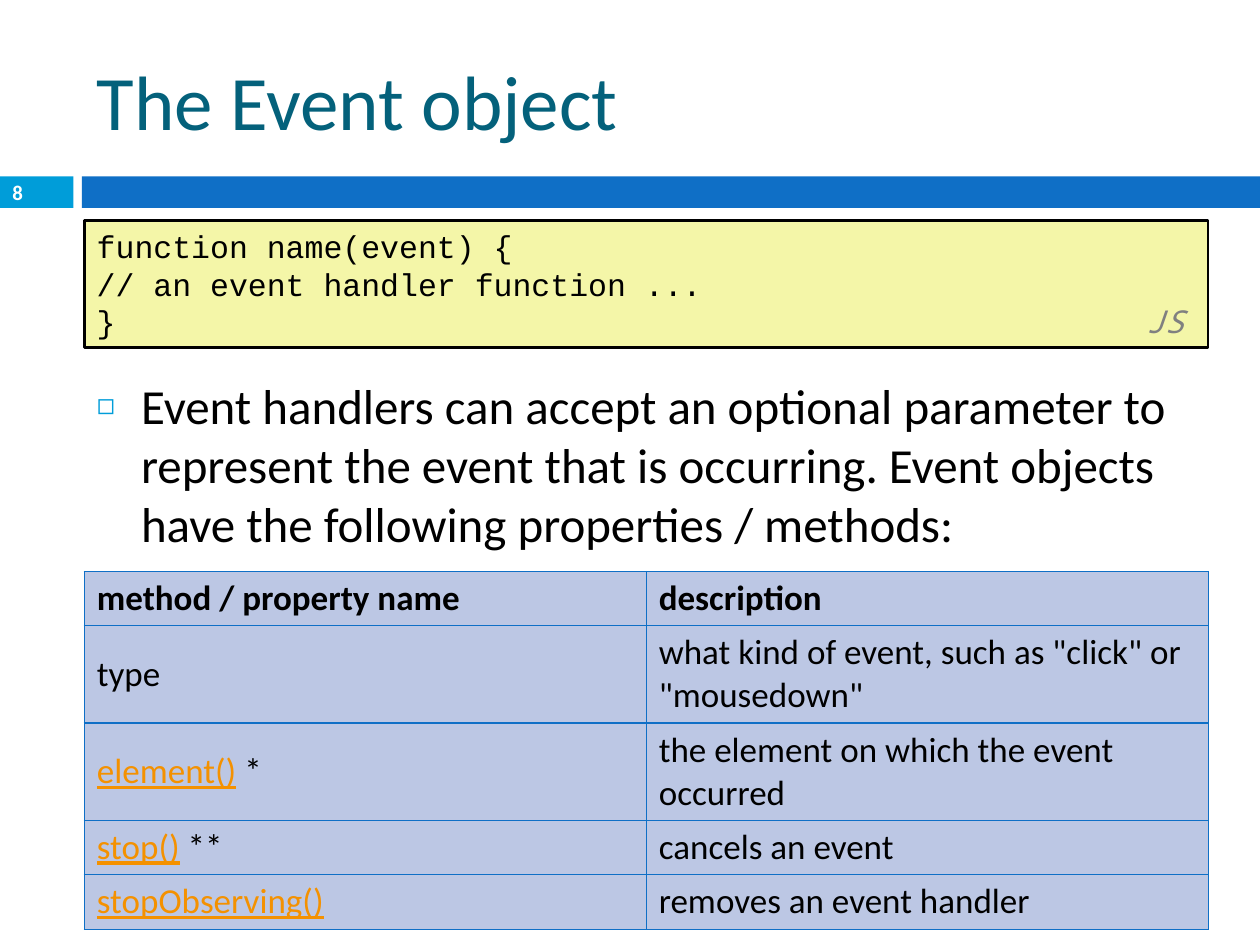
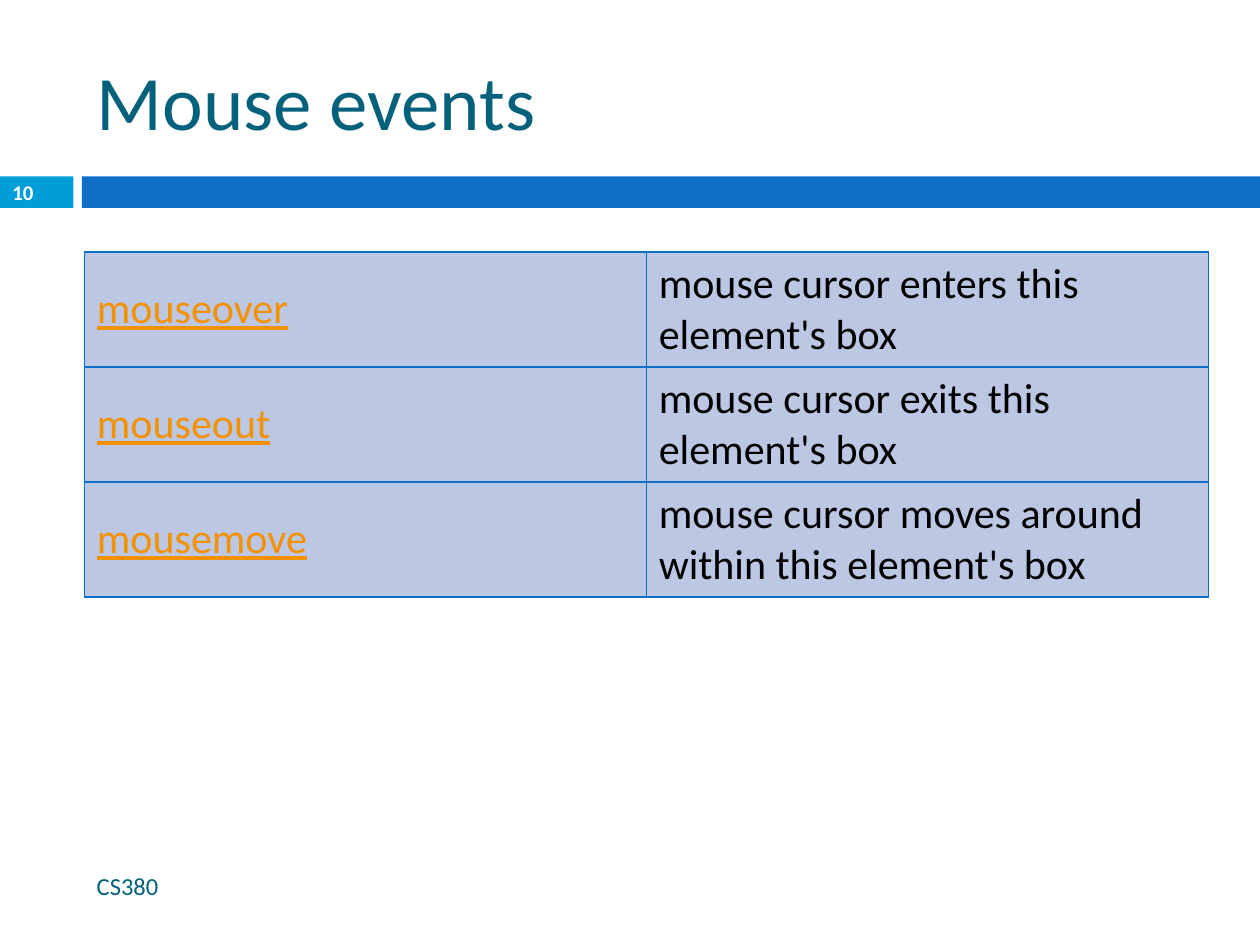
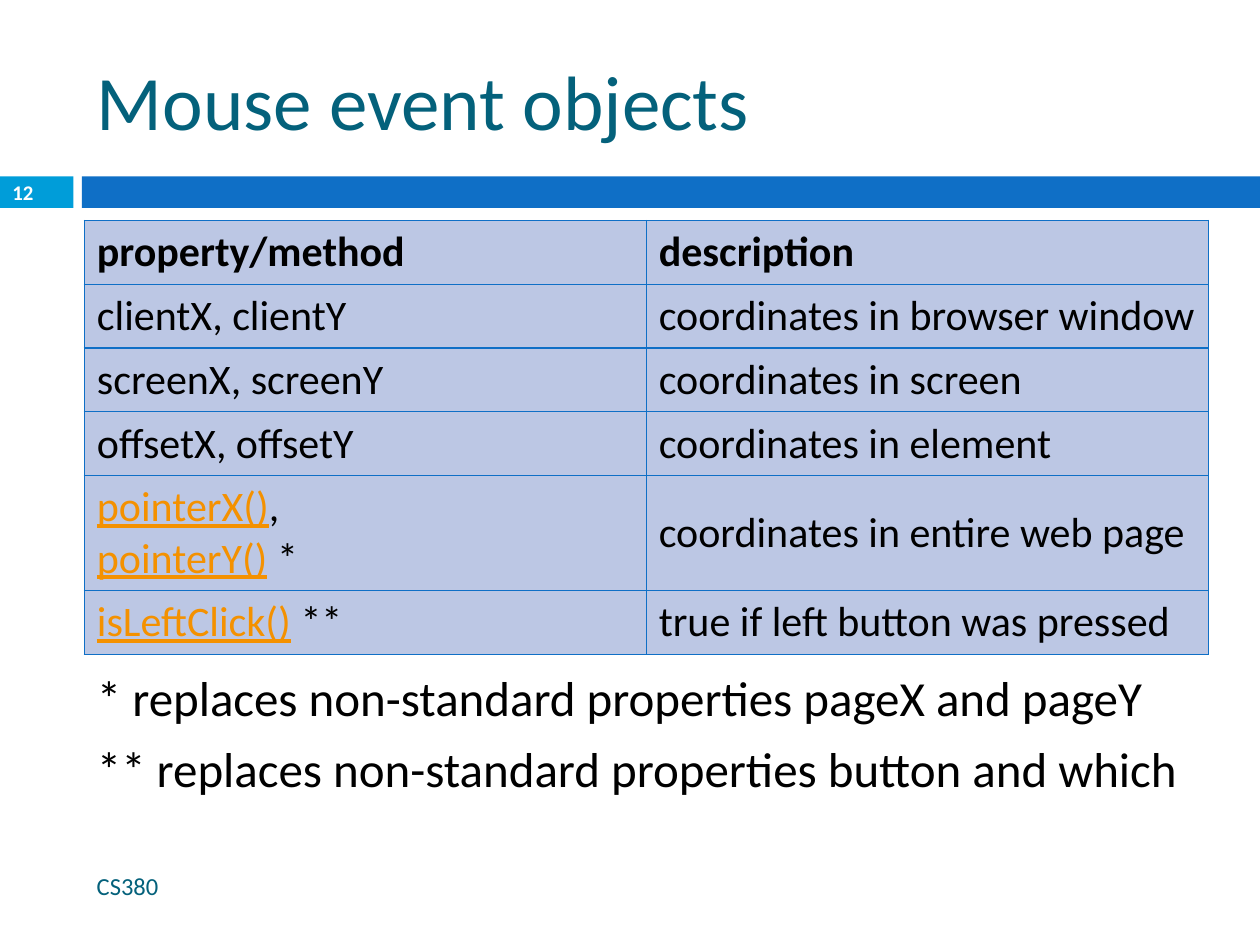
from collections import namedtuple

from lxml import etree
from pptx import Presentation
from pptx.dml.color import RGBColor
from pptx.enum import shapes, text
from pptx.oxml import ns
from pptx.util import Pt

# Shared look
TEAL = RGBColor(0x04, 0x61, 0x7B)
BLUE = RGBColor(0x0F, 0x6F, 0xC6)
CYAN = RGBColor(0x00, 0x9D, 0xD9)
ORANGE = RGBColor(0xF4, 0x91, 0x00)
CELL_BLUE = RGBColor(0xBC, 0xC7, 0xE4)
CODE_YELLOW = RGBColor(0xF4, 0xF6, 0xA8)
GRAY = RGBColor(0x80, 0x80, 0x80)
BLACK = RGBColor(0, 0, 0)
WHITE = RGBColor(0xFF, 0xFF, 0xFF)
BODY_FONT = "Calibri"
CODE_FONT = "Courier New"
LABEL_FONT = "Noto Sans Mono"

Box = namedtuple("Box", "left top width height")
LEFT, WIDTH = 48.2, 642.2
TITLE_BOX = Box(LEFT, 18, WIDTH, 77.8)
NUMBER_BOX = Box(0, 100.8, 42, 18)
BAND_BOX = Box(46.8, 100.8, 673.2, 18)
FOOTER_BOX = Box(LEFT, 491.8, 427, 28.8)
CONTENT_LAYOUT, TITLE_LAYOUT = 1, 5


def points(box):
    return [Pt(length) for length in box]


def place(shape, box):
    shape.left, shape.top, shape.width, shape.height = points(box)


def style(font, size, color, name=BODY_FONT, bold=False):
    font.size, font.name, font.bold = Pt(size), name, bold
    font.color.rgb = color


def add_element(parent, tag, **attributes):
    return etree.SubElement(parent, ns.qn(tag), attributes)


def add_rectangle(slide, box, fill):
    shape = slide.shapes.add_shape(shapes.MSO_SHAPE.RECTANGLE, *points(box))
    shape.shadow.inherit = False
    shape.fill.solid()
    shape.fill.fore_color.rgb = fill
    shape.line.fill.background()
    return shape


def add_frame(presentation, layout, title, number, footer=""):
    """Slide with title, band, slide number and optional footer."""
    slide = presentation.slides.add_slide(presentation.slide_layouts[layout])
    add_rectangle(slide, BAND_BOX, BLUE)

    number_shape = add_rectangle(slide, NUMBER_BOX, CYAN)
    number_shape.text_frame.text = str(number)
    number_shape.text_frame.vertical_anchor = text.MSO_ANCHOR.MIDDLE
    style(number_shape.text_frame.paragraphs[0].font, 11.9, WHITE, bold=True)

    title_shape = slide.shapes.title
    place(title_shape, TITLE_BOX)
    frame = title_shape.text_frame
    frame.text = title
    frame.auto_size = text.MSO_AUTO_SIZE.NONE
    frame.vertical_anchor = text.MSO_ANCHOR.MIDDLE
    frame.paragraphs[0].alignment = text.PP_ALIGN.LEFT
    style(frame.paragraphs[0].font, 44, TEAL)

    if footer:
        frame = slide.shapes.add_textbox(*points(FOOTER_BOX)).text_frame
        frame.word_wrap = True
        frame.vertical_anchor = text.MSO_ANCHOR.MIDDLE
        frame.text = footer
        style(frame.paragraphs[0].font, 14, TEAL)
    return slide


def fill_body(slide, box, lines, bulleted=False):
    """Body placeholder, with hollow square bullets or plain lines."""
    body = slide.placeholders[1]
    place(body, box)
    frame = body.text_frame
    frame.auto_size = text.MSO_AUTO_SIZE.NONE
    frame.text = "\n".join(lines)
    indent = Pt(25.2) if bulleted else 0
    for paragraph in frame.paragraphs:
        style(paragraph.font, 28, BLACK)
        paragraph.space_before = Pt(7)
        properties = paragraph._p.get_or_add_pPr()
        properties.set("marL", str(indent))
        properties.set("indent", str(-indent))
        if bulleted:
            color = add_element(properties, "a:buClr")
            add_element(color, "a:srgbClr", val=str(CYAN))
            add_element(properties, "a:buSzPct", val="60000")
            add_element(properties, "a:buChar", char="◻")
        else:
            add_element(properties, "a:buNone")


def add_code(slide, box, lines, language):
    """Code panel with the language name at the end of its last line."""
    panel = add_rectangle(slide, box, CODE_YELLOW)
    panel.line.color.rgb = BLACK
    panel.line.width = Pt(1.5)
    frame = panel.text_frame
    frame.vertical_anchor = text.MSO_ANCHOR.TOP
    frame.text = "\n".join(lines)
    for paragraph in frame.paragraphs:
        paragraph.alignment = text.PP_ALIGN.LEFT
        style(paragraph.font, 18, BLACK, CODE_FONT)

    last = frame.paragraphs[-1]
    tabs = add_element(last._p.get_or_add_pPr(), "a:tabLst")
    # The tab list belongs before the default run properties
    last._p.pPr.insert(0, tabs)
    add_element(tabs, "a:tab", pos=str(Pt(box.width - 42.7)), algn="l")
    last.add_run().text = "\t"
    label = last.add_run()
    label.text = language
    style(label.font, 18, GRAY, LABEL_FONT)
    label.font.italic = True


def add_borders(cell):
    properties = cell._tc.get_or_add_tcPr()
    for index, side in enumerate(("a:lnL", "a:lnR", "a:lnT", "a:lnB")):
        line = add_element(properties, side, w=str(Pt(0.79)))
        fill = add_element(line, "a:solidFill")
        add_element(fill, "a:srgbClr", val=str(BLUE))
        properties.insert(index, line)


def fill_cell(cell, content, size, bold, padding):
    """Write a cell; names in square brackets look like links."""
    cell.fill.solid()
    cell.fill.fore_color.rgb = CELL_BLUE
    cell.vertical_anchor = text.MSO_ANCHOR.MIDDLE
    cell.margin_top = cell.margin_bottom = Pt(padding)
    add_borders(cell)
    paragraph = cell.text_frame.paragraphs[0]
    style(paragraph.font, size, BLACK, bold=bold)
    for line_number, line in enumerate(content.split("\n")):
        if line_number:
            paragraph.add_line_break()
        for index, part in enumerate(line.replace("]", "[").split("[")):
            if part:
                run = paragraph.add_run()
                run.text = part
                is_link = index % 2 == 1
                style(run.font, size, ORANGE if is_link else BLACK, bold=bold)
                run.font.underline = is_link


def add_grid(slide, top, rows, size, tall_rows, header=True, padding=3.6):
    """Two-column table; tall rows hold two lines of text."""
    heights = [size * 1.22 * (2 if index in tall_rows else 1) + 2 * padding
               for index in range(len(rows))]
    box = Box(LEFT, top, WIDTH, sum(heights))
    table = slide.shapes.add_table(len(rows), 2, *points(box)).table
    table.first_row = header
    table.horz_banding = False
    for column in table.columns:
        column.width = Pt(WIDTH / 2)
    for index, contents in enumerate(rows):
        table.rows[index].height = Pt(heights[index])
        for cell, content in zip(table.rows[index].cells, contents):
            fill_cell(cell, content, size, header and index == 0, padding)


def build_event_object(presentation):
    slide = add_frame(presentation, CONTENT_LAYOUT, "The Event object", 8)
    fill_body(slide, Box(LEFT, 211, WIDTH, 110), [
        "Event handlers can accept an optional parameter to represent the "
        "event that is occurring. Event objects have the following "
        "properties / methods:",
    ], bulleted=True)
    add_code(slide, Box(LEFT, 126, WIDTH, 72.7), [
        "function name(event) {",
        "// an event handler function ...",
        "}",
    ], "JS")
    add_grid(slide, 326.5, [
        ("method / property name", "description"),
        ("type", 'what kind of event, such as "click" or "mousedown"'),
        ("[element()] *", "the element on which the event occurred"),
        ("[stop()] **", "cancels an event"),
        ("[stopObserving()]", "removes an event handler"),
    ], 20, tall_rows=(1, 2), padding=3.3)


def build_mouse_events(presentation):
    slide = add_frame(presentation, TITLE_LAYOUT, "Mouse events", 10, "CS380")
    add_grid(slide, 144, [
        ("[mouseover]", "mouse cursor enters this element's box"),
        ("[mouseout]", "mouse cursor exits this element's box"),
        ("[mousemove]", "mouse cursor moves around within this element's box"),
    ], 24, tall_rows=(0, 1, 2), header=False)


def build_mouse_event_objects(presentation):
    slide = add_frame(presentation, CONTENT_LAYOUT, "Mouse event objects", 12,
                      "CS380")
    add_grid(slide, 126, [
        ("property/method", "description"),
        ("clientX, clientY", "coordinates in browser window"),
        ("screenX, screenY", "coordinates in screen"),
        ("offsetX, offsetY", "coordinates in element"),
        ("[pointerX()],\n[pointerY()] *", "coordinates in entire web page"),
        ("[isLeftClick()] **", "true if left button was pressed"),
    ], 24, tall_rows=(4,))
    fill_body(slide, Box(LEFT, 378, WIDTH, 90), [
        "* replaces non-standard properties pageX and pageY",
        "** replaces non-standard properties button and which",
    ])


def main():
    presentation = Presentation()
    presentation.slide_width, presentation.slide_height = Pt(720), Pt(540)
    build_event_object(presentation)
    build_mouse_events(presentation)
    build_mouse_event_objects(presentation)
    presentation.save("out.pptx")


if __name__ == "__main__":
    main()
